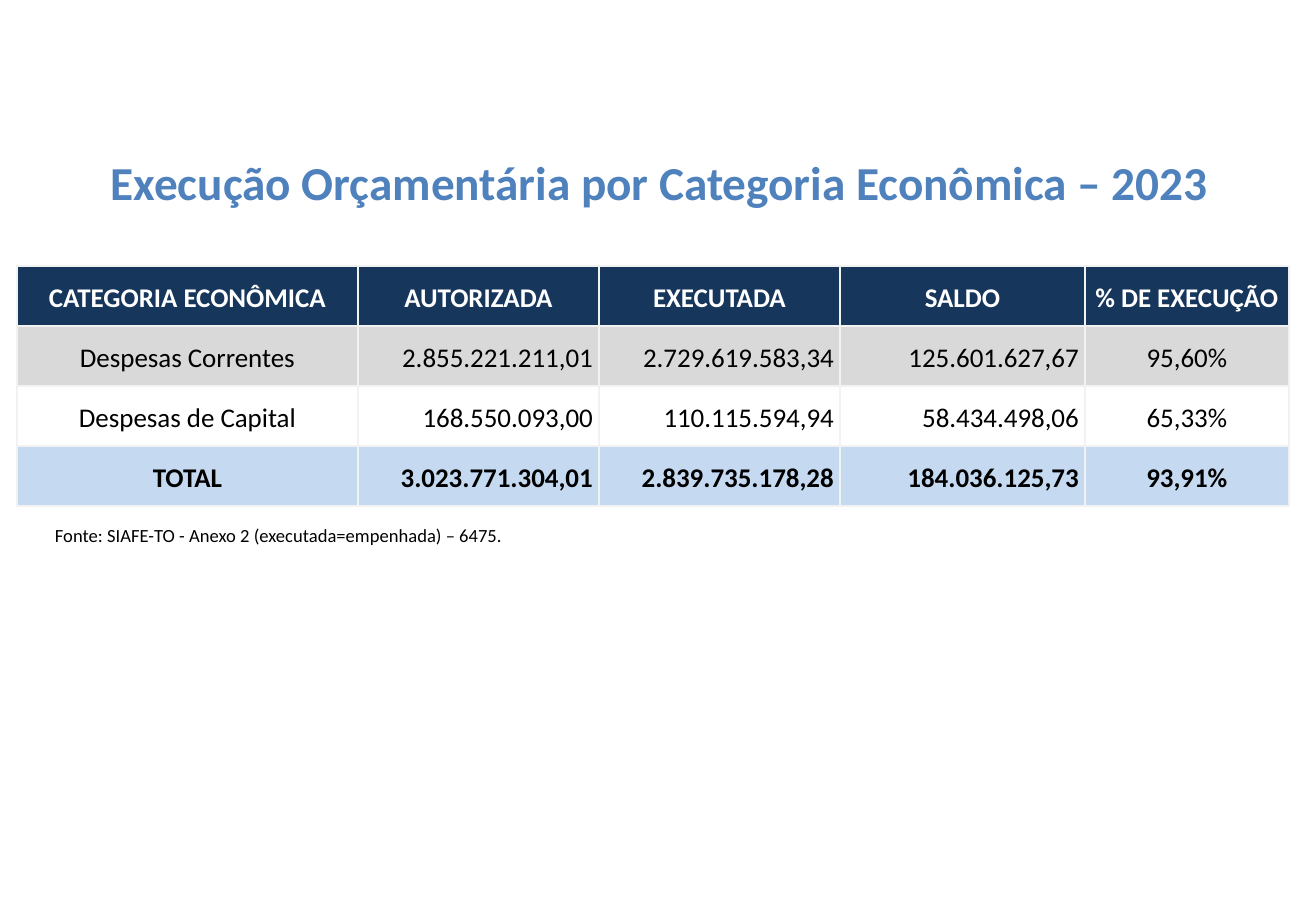
"""Build the slide on budget execution by economic category."""
from dataclasses import dataclass

from lxml.etree import SubElement
from pptx import Presentation
from pptx.dml.color import RGBColor
from pptx.enum.text import MSO_ANCHOR, PP_ALIGN
from pptx.oxml.ns import qn
from pptx.util import Pt

PX = 7526


@dataclass(frozen=True)
class Theme:
    """Colours, font and type sizes."""
    font: str = "Calibri"
    title: str = "4F81BD"
    header: str = "16365C"
    band: str = "D9D9D9"
    total: str = "C5D9F1"
    border: str = "F2F2F2"
    white: str = "FFFFFF"
    black: str = "000000"
    title_size: int = 28
    table_size: int = 16
    source_size: int = 11


def write(frame, text, *, font, size, color, bold=False,
          align=PP_ALIGN.LEFT, spacing=1.0):
    """Put one formatted paragraph in a text frame."""
    paragraph = frame.paragraphs[0]
    paragraph.alignment = align
    paragraph.line_spacing = spacing
    run = paragraph.add_run()
    run.text = text
    run.font.name = font
    run.font.size = Pt(size)
    run.font.bold = bold
    run.font.color.rgb = RGBColor.from_string(color)


class BudgetSlide:
    """Hold the theme and the current slide."""

    def __init__(self, deck, theme):
        """Add a title-only slide to the deck."""
        self.theme = theme
        self.slide = deck.slides.add_slide(deck.slide_layouts[5])

    def title(self, text, left, top, width, height):
        """Place and format the title placeholder."""
        heading = self.slide.shapes.title
        heading.left, heading.top = left * PX, top * PX
        heading.width, heading.height = width * PX, height * PX
        heading.text_frame.vertical_anchor = MSO_ANCHOR.TOP
        write(heading.text_frame, text, font=self.theme.font,
              size=self.theme.title_size, color=self.theme.title,
              bold=True, align=PP_ALIGN.CENTER)

    def source(self, text, left, top, width, height):
        """Add the source line."""
        note = self.slide.shapes.add_textbox(
            left * PX, top * PX, width * PX, height * PX)
        note.text_frame.word_wrap = True
        write(note.text_frame, text, font=self.theme.font,
              size=self.theme.source_size, color=self.theme.black,
              spacing=1.15)

    def table(self, rows, styles, aligns, widths, row_height, left, top):
        """Add a table whose rows each have a fill, text colour and weight."""
        budget = self.slide.shapes.add_table(
            len(rows), len(widths), left * PX, top * PX,
            sum(widths) * PX, len(rows) * row_height * PX).table
        for column, width in zip(budget.columns, widths):
            column.width = width * PX
        for index, (values, style) in enumerate(zip(rows, styles)):
            budget.rows[index].height = row_height * PX
            for position, value in enumerate(values):
                align = aligns[position] if index else PP_ALIGN.CENTER
                self.cell(budget.cell(index, position), value, align, *style)

    def cell(self, cell, value, align, fill, color, bold):
        """Format and fill one table cell."""
        cell.vertical_anchor = MSO_ANCHOR.MIDDLE
        cell.margin_left = cell.margin_right = 6 * PX
        cell.margin_top = cell.margin_bottom = 0
        self.borders(cell)
        if fill:
            cell.fill.solid()
            cell.fill.fore_color.rgb = RGBColor.from_string(fill)
        else:
            cell.fill.background()
        write(cell.text_frame, value, font=self.theme.font,
              size=self.theme.table_size, color=color, bold=bold,
              align=align, spacing=1.15)

    def borders(self, cell):
        """Draw a thin line on all four sides of a cell."""
        properties = cell._tc.get_or_add_tcPr()
        for side in ("a:lnL", "a:lnR", "a:lnT", "a:lnB"):
            line = SubElement(properties, qn(side), w=str(Pt(1)))
            SubElement(SubElement(line, qn("a:solidFill")),
                       qn("a:srgbClr"), val=self.theme.border)


def main():
    """Build and save the deck."""
    deck = Presentation()
    deck.slide_width, deck.slide_height = 1316 * PX, 911 * PX
    theme = Theme()
    page = BudgetSlide(deck, theme)
    page.title("Execução Orçamentária por Categoria Econômica – 2023",
               0, 147, 1318, 69)
    rows = [
        ("CATEGORIA ECONÔMICA", "AUTORIZADA", "EXECUTADA", "SALDO",
         "% DE EXECUÇÃO"),
        ("Despesas Correntes", "2.855.221.211,01", "2.729.619.583,34",
         "125.601.627,67", "95,60%"),
        ("Despesas de Capital", "168.550.093,00", "110.115.594,94",
         "58.434.498,06", "65,33%"),
        ("TOTAL", "3.023.771.304,01", "2.839.735.178,28",
         "184.036.125,73", "93,91%"),
    ]
    styles = [
        (theme.header, theme.white, True),
        (theme.band, theme.black, False),
        (None, theme.black, False),
        (theme.total, theme.black, True),
    ]
    aligns = [PP_ALIGN.CENTER, *[PP_ALIGN.RIGHT] * 3, PP_ALIGN.CENTER]
    page.table(rows, styles, aligns, widths=(341, 241, 241, 245, 204),
               row_height=60, left=17, top=266)
    page.source("Fonte: SIAFE-TO - Anexo 2 (executada=empenhada) – 6475.",
                43, 515, 1186, 36)
    deck.save("out.pptx")


if __name__ == "__main__":
    main()
